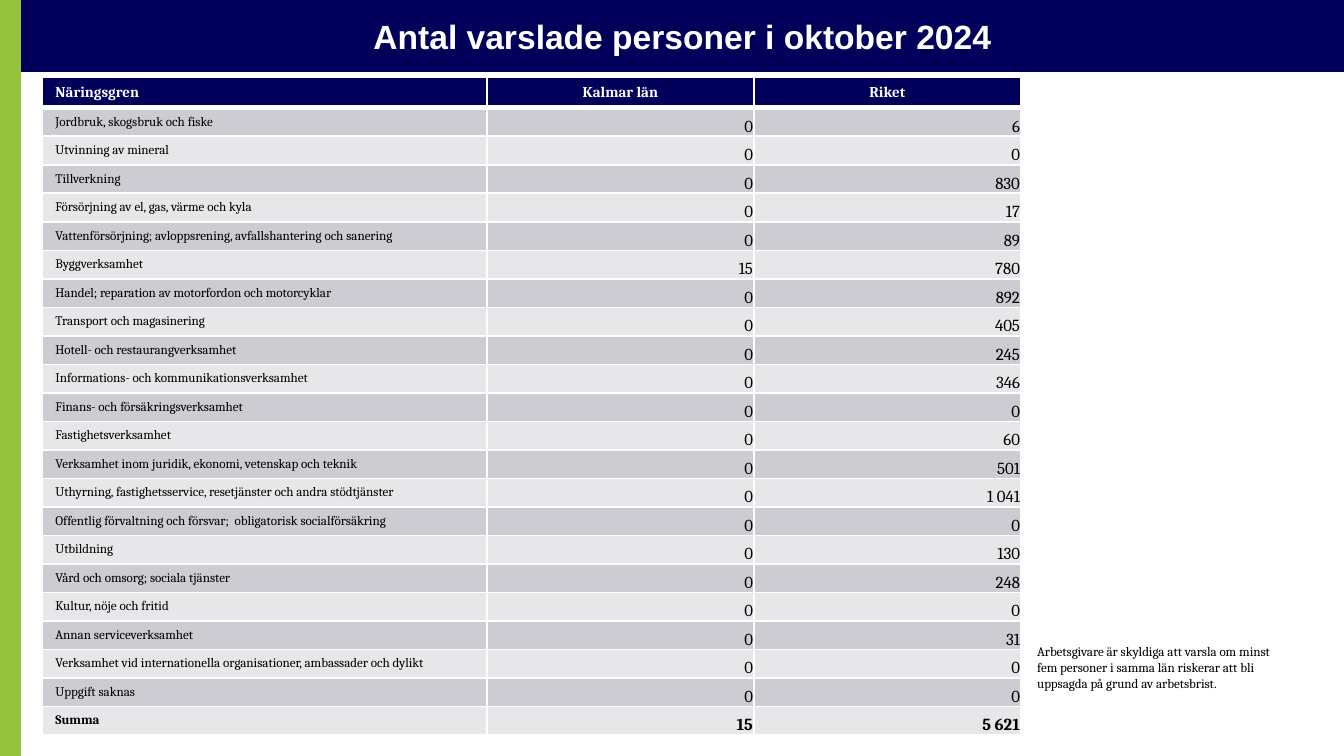
from pptx import Presentation
from pptx.dml.color import RGBColor
from pptx.enum.shapes import MSO_SHAPE as Shape
from pptx.enum.text import MSO_ANCHOR as Anchor, MSO_AUTO_SIZE as Fit, PP_ALIGN as Align
from pptx.oxml import parse_xml
from pptx.oxml.ns import nsdecls
from pptx.util import Pt

SCALE = 914400 / 134.4
NAVY, GREEN, WHITE, BLACK = "00005A", "95C23D", "FFFFFF", "000000"
BANDS = ["CCCCD2", "E7E7EA"]

HEADS = ["Näringsgren", "Kalmar län", "Riket"]
ROWS = [
    ("Jordbruk, skogsbruk och fiske", "0", "6"),
    ("Utvinning av mineral", "0", "0"),
    ("Tillverkning", "0", "830"),
    ("Försörjning av el, gas, värme och kyla", "0", "17"),
    ("Vattenförsörjning; avloppsrening, avfallshantering och sanering", "0", "89"),
    ("Byggverksamhet", "15", "780"),
    ("Handel; reparation av motorfordon och motorcyklar", "0", "892"),
    ("Transport och magasinering", "0", "405"),
    ("Hotell- och restaurangverksamhet", "0", "245"),
    ("Informations- och kommunikationsverksamhet", "0", "346"),
    ("Finans- och försäkringsverksamhet", "0", "0"),
    ("Fastighetsverksamhet", "0", "60"),
    ("Verksamhet inom juridik, ekonomi, vetenskap och teknik", "0", "501"),
    ("Uthyrning, fastighetsservice, resetjänster och andra stödtjänster", "0", "1 041"),
    ("Offentlig förvaltning och försvar;  obligatorisk socialförsäkring", "0", "0"),
    ("Utbildning", "0", "130"),
    ("Vård och omsorg; sociala tjänster", "0", "248"),
    ("Kultur, nöje och fritid", "0", "0"),
    ("Annan serviceverksamhet", "0", "31"),
    ("Verksamhet vid internationella organisationer, ambassader och dylikt", "0", "0"),
    ("Uppgift saknas", "0", "0"),
    ("Summa", "15", "5 621"),
]
NOTE = ("Arbetsgivare är skyldiga att varsla om minst fem personer i samma län "
        "riskerar att bli uppsagda på grund av arbetsbrist.")


def px(n):
    return round(n * SCALE)


def color(code):
    return RGBColor.from_string(code)


class Deck:
    def __init__(self, slide, font):
        self.slide = slide
        self.font = font

    def label(self, frame, text, size, code=BLACK, bold=False, align=Align.LEFT, font=None):
        frame.text = text
        par = frame.paragraphs[0]
        par.alignment = align
        for run in par.runs:
            run.font.name = font or self.font
            run.font.size = Pt(size)
            run.font.bold = bold
            run.font.color.rgb = color(code)

    def block(self, x, y, w, h, code):
        shape = self.slide.shapes.add_shape(Shape.RECTANGLE, px(x), px(y), px(w), px(h))
        shape.shadow.inherit = False
        shape.fill.solid()
        shape.fill.fore_color.rgb = color(code)
        shape.line.fill.background()
        return shape

    def title(self, x, y, w, h, text):
        frame = self.block(x, y, w, h, NAVY).text_frame
        frame.word_wrap = True
        frame.vertical_anchor = Anchor.MIDDLE
        self.label(frame, text, 18, WHITE, True, Align.CENTER, "Arial")

    def note(self, x, y, w, h, text):
        frame = self.slide.shapes.add_textbox(px(x), px(y), px(w), px(h)).text_frame
        frame.word_wrap = True
        frame.auto_size = Fit.SHAPE_TO_FIT_TEXT
        self.label(frame, text, 7)

    def paint(self, cell, code, top=1, base=1):
        props = cell._tc.get_or_add_tcPr()
        for side, width in zip("LRTB", (1, 1, top, base)):
            props.append(parse_xml(
                f'<a:ln{side} {nsdecls("a")} w="{Pt(width)}"><a:solidFill>'
                f'<a:srgbClr val="{WHITE}"/></a:solidFill></a:ln{side}>'))
        cell.fill.solid()
        cell.fill.fore_color.rgb = color(code)

    def table(self, x, y, cols, head, step, heads, rows):
        high = head + step * len(rows)
        grid = self.slide.shapes.add_table(
            len(rows) + 1, len(cols), px(x), px(y), px(sum(cols)), px(high)).table
        for col, width in zip(grid.columns, cols):
            col.width = px(width)
        for i, row in enumerate(grid.rows):
            row.height = px(step if i else head)
        for j, text in enumerate(heads):
            cell = grid.cell(0, j)
            self.paint(cell, NAVY, base=3)
            align = Align.CENTER if j else Align.LEFT
            self.label(cell.text_frame, text, 8, WHITE, True, align)
        for i, row in enumerate(rows, 1):
            last = i == len(rows)
            for j, text in enumerate(row):
                cell = grid.cell(i, j)
                self.paint(cell, BANDS[(i - 1) % 2], top=3 if i == 1 else 1)
                if j:
                    cell.vertical_anchor = Anchor.BOTTOM
                    cell.margin_left = cell.margin_right = cell.margin_top = px(1)
                    cell.margin_bottom = 0
                    self.label(cell.text_frame, text, 9, bold=last, align=Align.RIGHT)
                else:
                    self.label(cell.text_frame, text, 7, bold=last)


def main():
    prs = Presentation()
    prs.slide_width, prs.slide_height = px(1344), px(756)
    deck = Deck(prs.slides.add_slide(prs.slide_layouts[6]), "Cambria")
    deck.block(0, 0, 21, 756, GREEN)
    deck.table(42, 77, [445, 267, 267], 30, 27, HEADS, ROWS)
    deck.title(21, 0, 1323, 72, "Antal varslade personer i oktober 2024")
    deck.note(1024, 637, 280, 61, NOTE)
    prs.save("out.pptx")


if __name__ == "__main__":
    main()
